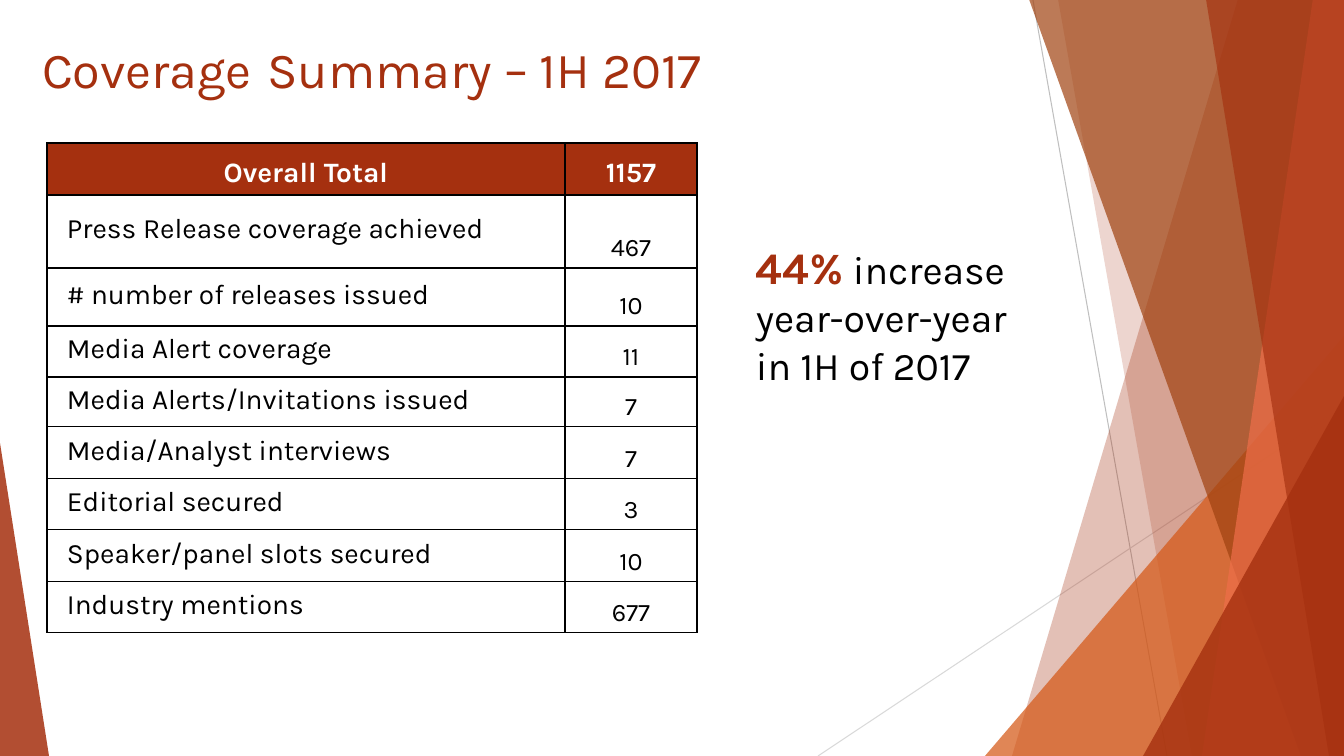
from dataclasses import dataclass

from lxml import etree
from pptx import Presentation
from pptx import util as u
from pptx.dml.color import RGBColor
from pptx.enum import shapes, text
from pptx.oxml import ns

SCALE = u.Inches(7.5) / 756
WIDTH, HEIGHT = 1344, 756


@dataclass(frozen=True)
class Theme:
    font: str = "Karla"
    gap_font: str = "Arial"
    rust: str = "A5300F"
    orange: str = "D55816"
    brown: str = "A04210"
    coral: str = "EE6E4A"
    grey: str = "595959"
    mid_grey: str = "BFBFBF"
    light_grey: str = "D9D9D9"
    black: str = "000000"
    white: str = "FFFFFF"
    title: int = 36
    title_gap: int = 40
    highlight: int = 32
    callout: int = 28
    label: int = 20
    count: int = 18


THEME = Theme()

COVERAGE = [
    ("Overall Total", "1157", 52),
    ("Press Release coverage achieved", "467", 73),
    ("# number of releases issued", "10", 58),
    ("Media Alert coverage", "11", 51),
    ("Media Alerts/Invitations issued", "7", 50),
    ("Media/Analyst interviews", "7", 52),
    ("Editorial secured", "3", 51),
    ("Speaker/panel slots secured", "10", 52),
    ("Industry mentions", "677", 51),
]


def px(length):
    return u.Emu(round(length * SCALE))


def box(*lengths):
    return [px(length) for length in lengths]


def style(font, size, color, bold=False, name=THEME.font):
    font.name = name
    font.size = u.Pt(size)
    font.bold = bold
    font.color.rgb = RGBColor.from_string(color)


def tint(shape, color, opacity):
    shape.shadow.inherit = False
    shape.line.fill.background()
    shape.fill.solid()
    shape.fill.fore_color.rgb = RGBColor.from_string(color)
    tone = shape.fill._xPr.find(".//" + ns.qn("a:srgbClr"))
    etree.SubElement(tone, ns.qn("a:alpha"), val=str(opacity * 1000))


def add_hairline(slide, start, end, color):
    hairline = slide.shapes.add_connector(
        shapes.MSO_CONNECTOR.STRAIGHT, *box(*start, *end))
    hairline.line.width = u.Pt(0.75)
    hairline.line.color.rgb = RGBColor.from_string(color)
    etree.SubElement(hairline._element.spPr, ns.qn("a:effectLst"))


def add_ribbon(slide, top_left, bottom_left, color, opacity):
    outline = slide.shapes.build_freeform(top_left, -1, scale=SCALE)
    outline.add_line_segments(
        [(WIDTH, -1), (WIDTH, HEIGHT), (bottom_left, HEIGHT)], close=True)
    tint(outline.convert_to_shape(), color, opacity)


def add_corner(slide, left, top, width, apex, color, opacity):
    corner = slide.shapes.add_shape(
        shapes.MSO_SHAPE.ISOSCELES_TRIANGLE, *box(left, top, width, HEIGHT - top))
    corner.adjustments[0] = apex
    tint(corner, color, opacity)


def add_decoration(slide):
    add_hairline(slide, (1033, 0), (1167, HEIGHT), THEME.mid_grey)
    add_hairline(slide, (WIDTH, 406), (818, HEIGHT), THEME.light_grey)
    add_ribbon(slide, 1238, 1012, THEME.rust, 30)
    add_ribbon(slide, 1058, 1192, THEME.rust, 20)
    add_corner(slide, 985, 336, 359, 1, THEME.orange, 72)
    add_ribbon(slide, 1029, 1301, THEME.brown, 70)
    add_ribbon(slide, 1313, 1202, THEME.coral, 70)
    add_ribbon(slide, 1206, 1329, THEME.rust, 65)
    add_corner(slide, 1143, 396, 201, 1, THEME.rust, 80)
    add_corner(slide, 0, 443, 49, 0, THEME.rust, 85)


def add_title(slide):
    title = slide.shapes.title
    title.left, title.top, title.width, title.height = box(32, 27, 985, 78)
    frame = title.text_frame
    frame.auto_size = text.MSO_AUTO_SIZE.NONE
    frame.vertical_anchor = text.MSO_ANCHOR.TOP
    heading = frame.paragraphs[0]
    heading.alignment = text.PP_ALIGN.LEFT
    heading.space_before = u.Pt(8)
    for words in ("Coverage", " ", "Summary – 1H 2017"):
        run = heading.add_run()
        run.text = words
        if words.isspace():
            style(run.font, THEME.title_gap, THEME.grey, True, THEME.gap_font)
        else:
            style(run.font, THEME.title, THEME.rust)


def add_borders(cell):
    properties = cell._tc.get_or_add_tcPr()
    for side in ("lnL", "lnR", "lnT", "lnB"):
        border = etree.SubElement(properties, ns.qn("a:" + side), w=str(u.Pt(1)))
        fill = etree.SubElement(border, ns.qn("a:solidFill"))
        etree.SubElement(fill, ns.qn("a:srgbClr"), val=THEME.black)


def fill_cell(cell, words, size, is_header, is_label):
    add_borders(cell)
    cell.margin_left = px(20 if is_label else 1)
    cell.margin_top = cell.margin_right = px(1)
    cell.margin_bottom = px(5)
    cell.vertical_anchor = text.MSO_ANCHOR.MIDDLE if is_label else text.MSO_ANCHOR.BOTTOM
    entry = cell.text_frame.paragraphs[0]
    entry.text = words
    entry.alignment = text.PP_ALIGN.LEFT if is_label else text.PP_ALIGN.CENTER
    style(entry.font, size, THEME.white if is_header else THEME.black, is_header)
    if is_header:
        cell.fill.solid()
        cell.fill.fore_color.rgb = RGBColor.from_string(THEME.rust)
    else:
        cell.fill.background()


def add_coverage(slide):
    total_height = sum(height for _, _, height in COVERAGE)
    coverage = slide.shapes.add_table(
        len(COVERAGE), 2, *box(47, 143, 650, total_height)).table
    coverage.first_row = coverage.horz_banding = False
    for column, width in zip(coverage.columns, (518, 132)):
        column.width = px(width)
    for index, (label, count, height) in enumerate(COVERAGE):
        is_header = index == 0
        coverage.rows[index].height = px(height)
        fill_cell(coverage.cell(index, 0), label, THEME.label, is_header, not is_header)
        count_size = THEME.label if is_header else THEME.count
        fill_cell(coverage.cell(index, 1), count, count_size, is_header, False)


def add_callout(slide):
    frame = slide.shapes.add_textbox(*box(746, 235, 291, 159)).text_frame
    frame.word_wrap = True
    growth = frame.paragraphs[0]
    style(growth.font, THEME.callout, THEME.black)
    highlight = growth.add_run()
    highlight.text = "44%"
    style(highlight.font, THEME.highlight, THEME.rust, True)
    for index, line in enumerate((" increase ", "year-over-year", "in 1H of 2017")):
        if index:
            growth.add_line_break()
        growth.add_run().text = line


def main():
    deck = Presentation()
    deck.slide_width, deck.slide_height = box(WIDTH, HEIGHT)
    slide = deck.slides.add_slide(deck.slide_layouts[5])
    add_decoration(slide)
    add_title(slide)
    add_coverage(slide)
    add_callout(slide)
    deck.save("out.pptx")


if __name__ == "__main__":
    main()
